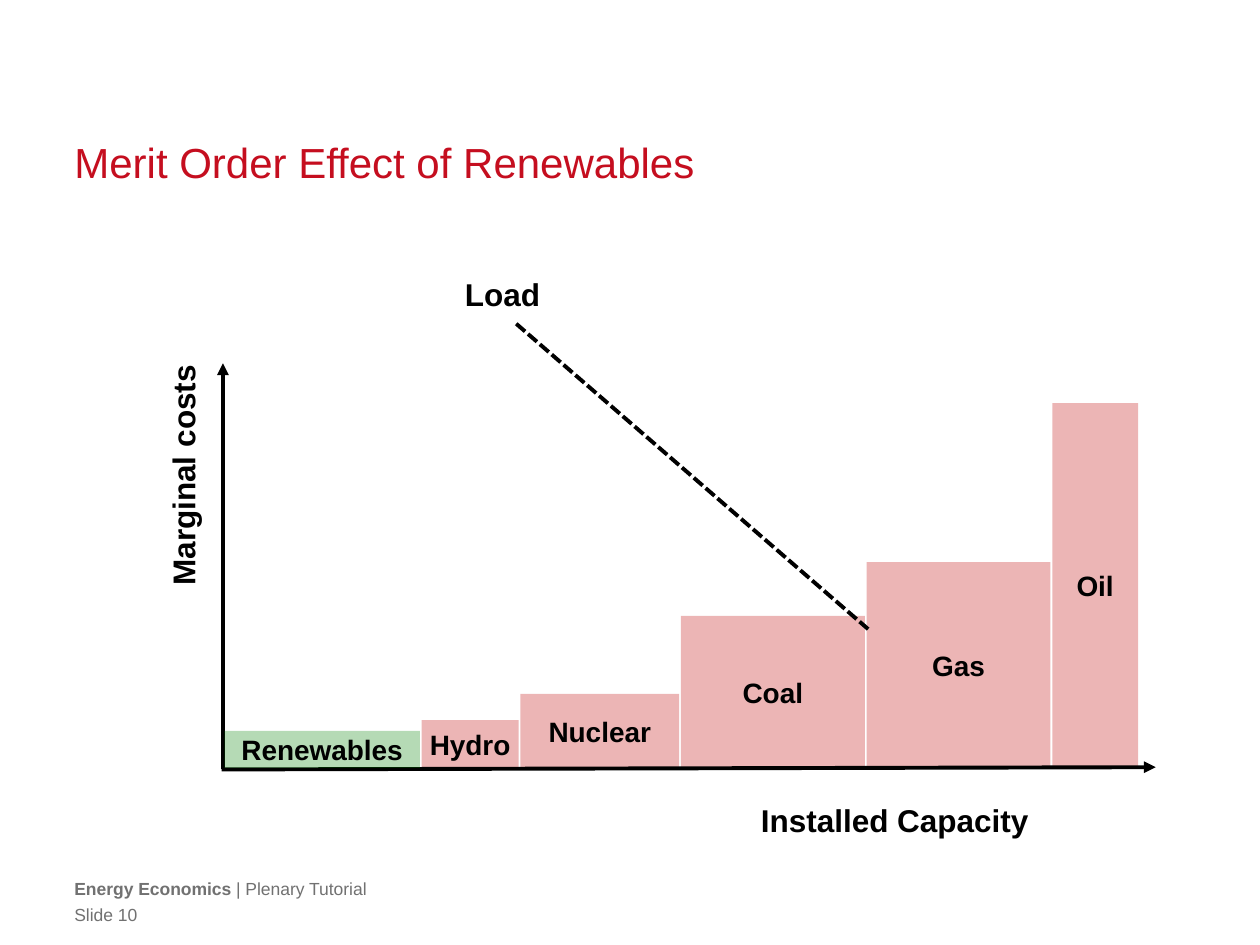
"""Build the merit order slide with generation blocks, axes and a load line."""

from dataclasses import dataclass

from lxml.etree import SubElement
from pptx import Presentation
from pptx.dml.color import RGBColor
from pptx.enum.dml import MSO_LINE
from pptx.enum.shapes import MSO_CONNECTOR, MSO_SHAPE
from pptx.enum.text import MSO_ANCHOR, MSO_AUTO_SIZE, PP_ALIGN
from pptx.oxml.ns import qn
from pptx.slide import Slide
from pptx.text.text import TextFrame
from pptx.util import Pt


@dataclass(frozen=True)
class Theme:
    font: str = "Arial"
    red: str = "C50E1F"
    grey: str = "717171"
    black: str = "000000"
    conventional: str = "C00000"
    renewable: str = "008000"
    block_opacity: int = 29
    title_size: float = 24
    title_leading: float = 30
    label_size: float = 18
    block_size: float = 16
    footer_size: float = 10
    line_width: float = 2.25


@dataclass(frozen=True)
class Block:
    name: str
    left: float
    width: float
    height: float
    color: str


@dataclass(frozen=True)
class Label:
    text: str
    left: float
    top: float
    width: float
    height: float
    rotation: float = 0


@dataclass(frozen=True)
class Line:
    start: tuple[float, float]
    end: tuple[float, float]
    arrow: bool = True
    dashed: bool = False


THEME = Theme()
BASELINE = 438.8
FIRST_LEFT = 128.2
BLOCK_GAP = 1
MARGIN = 42.5
CONTENT_WIDTH = 635
SOURCES = (
    ("Renewables", 111.8, 21.2, THEME.renewable),
    ("Hydro", 55.4, 27.2, THEME.conventional),
    ("Nuclear", 90.7, 42.3, THEME.conventional),
    ("Coal", 105.1, 86.9, THEME.conventional),
    ("Gas", 105.1, 117.6, THEME.conventional),
    ("Oil", 49, 208.4, THEME.conventional),
)
LABELS = (
    Label("Marginal costs", 25.4, 266.4, 158.4, 28.8, 270),
    Label("Installed Capacity", 421.4, 454.3, 173.5, 28.8),
    Label("Load", 254.5, 153.4, 61.2, 28.8),
)
LINES = (
    Line((126.7, 439.7), (660.4, 438.4)),
    Line((127.4, 439.7), (127.4, 207.6)),
    Line((295, 185), (496.1, 359.5), arrow=False, dashed=True),
)
FOOTERS = (
    (("Energy Economics ", True), ("| Plenary Tutorial", False)),
    (("Slide 10", False),),
)


def style_text(frame: TextFrame, size: float, color: str, bold: bool = False) -> None:
    for para in frame.paragraphs:
        for span in para.runs:
            span.font.name = THEME.font
            span.font.size = Pt(size)
            span.font.bold = bold
            span.font.color.rgb = RGBColor.from_string(color)


def clear_margins(frame: TextFrame) -> None:
    frame.margin_left = frame.margin_right = Pt(0)
    frame.margin_top = frame.margin_bottom = Pt(0)


def add_title(page: Slide, text: str) -> None:
    title = page.shapes.title
    title.left, title.top = Pt(MARGIN), Pt(76.8)
    title.width, title.height = Pt(CONTENT_WIDTH), Pt(2 * THEME.title_leading)
    frame = title.text_frame
    frame.text = text
    frame.auto_size = MSO_AUTO_SIZE.NONE
    frame.vertical_anchor = MSO_ANCHOR.TOP
    clear_margins(frame)
    para = frame.paragraphs[0]
    para.alignment = PP_ALIGN.LEFT
    para.line_spacing = Pt(THEME.title_leading)
    style_text(frame, THEME.title_size, THEME.red)


def add_footer(page: Slide, top: float, parts: tuple[tuple[str, bool], ...]) -> None:
    box = page.shapes.add_textbox(Pt(MARGIN), Pt(top), Pt(CONTENT_WIDTH), Pt(12.2))
    frame = box.text_frame
    frame.word_wrap = True
    clear_margins(frame)
    para = frame.paragraphs[0]
    for text, _ in parts:
        para.add_run().text = text
    style_text(frame, THEME.footer_size, THEME.grey)
    for span, (_, bold) in zip(para.runs, parts):
        span.font.bold = bold


def stack_blocks() -> list[Block]:
    blocks = []
    left = FIRST_LEFT
    for name, width, height, color in SOURCES:
        blocks.append(Block(name, left, width, height, color))
        left += width + BLOCK_GAP
    return blocks


def add_block(page: Slide, block: Block) -> None:
    box = page.shapes.add_shape(
        MSO_SHAPE.RECTANGLE,
        Pt(block.left), Pt(BASELINE - block.height), Pt(block.width), Pt(block.height),
    )
    box.shadow.inherit = False
    box.fill.solid()
    box.fill.fore_color.rgb = RGBColor.from_string(block.color)
    color = box._element.spPr.find(f"{qn('a:solidFill')}/{qn('a:srgbClr')}")
    SubElement(color, qn("a:alpha"), val=str(THEME.block_opacity * 1000))
    box.line.fill.background()
    frame = box.text_frame
    frame.text = block.name
    frame.word_wrap = False
    frame.vertical_anchor = MSO_ANCHOR.MIDDLE
    frame.paragraphs[0].alignment = PP_ALIGN.CENTER
    style_text(frame, THEME.block_size, THEME.black, bold=True)


def add_label(page: Slide, label: Label) -> None:
    box = page.shapes.add_textbox(
        Pt(label.left), Pt(label.top), Pt(label.width), Pt(label.height)
    )
    box.rotation = label.rotation
    frame = box.text_frame
    frame.text = label.text
    frame.word_wrap = True
    frame.auto_size = MSO_AUTO_SIZE.SHAPE_TO_FIT_TEXT
    frame.paragraphs[0].alignment = PP_ALIGN.RIGHT
    style_text(frame, THEME.label_size, THEME.black, bold=True)


def add_line(page: Slide, line: Line) -> None:
    connector = page.shapes.add_connector(
        MSO_CONNECTOR.STRAIGHT, *map(Pt, line.start), *map(Pt, line.end)
    )
    connector.line.width = Pt(THEME.line_width)
    connector.line.color.rgb = RGBColor.from_string(THEME.black)
    if line.dashed:
        connector.line.dash_style = MSO_LINE.SQUARE_DOT
    properties = connector._element.spPr
    if line.arrow:
        SubElement(properties.find(qn("a:ln")), qn("a:tailEnd"), type="triangle")
    SubElement(properties, qn("a:effectLst"))


def main() -> None:
    deck = Presentation()
    deck.slide_width, deck.slide_height = Pt(720), Pt(540)
    page = deck.slides.add_slide(deck.slide_layouts[5])
    add_title(page, "Merit Order Effect of Renewables")
    for row, parts in enumerate(FOOTERS):
        add_footer(page, 501.8 + row * 14.8, parts)
    renewables, *conventional = stack_blocks()
    for block in conventional:
        add_block(page, block)
    for line in LINES:
        add_line(page, line)
    for label in LABELS:
        add_label(page, label)
    add_block(page, renewables)
    deck.save("out.pptx")


if __name__ == "__main__":
    main()
